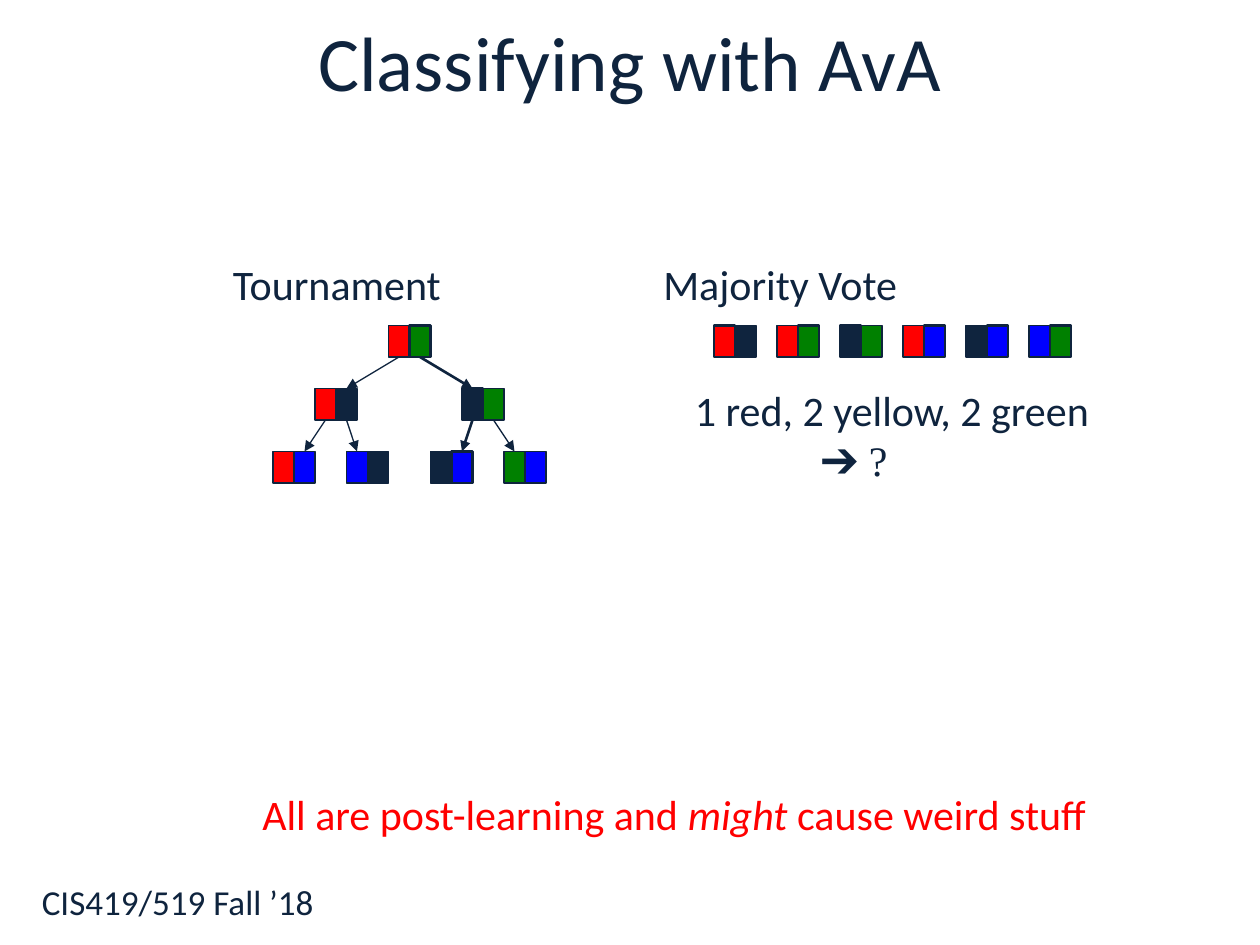
from lxml import etree
from pptx import Presentation
from pptx.dml.color import RGBColor
from pptx.enum.shapes import MSO_CONNECTOR, MSO_SHAPE
from pptx.enum.text import MSO_ANCHOR, MSO_AUTO_SIZE, PP_ALIGN
from pptx.oxml.ns import qn
from pptx.util import Emu, Pt

RECTANGLE = MSO_SHAPE.RECTANGLE
STRAIGHT = MSO_CONNECTOR.STRAIGHT
TOP, BOTTOM = 0, 2
LEFT_HALF, RIGHT_HALF = 0, 1
PX = 7620  # 120 px to the inch

THEME = {
    "ink": "0F243E", "red": "FF0000", "green": "008000", "blue": "0000FF",
    "font": "Calibri", "symbol_font": "Times New Roman",
    "title": 44, "body": 24, "footer": 20,
    "thin": 0.75, "thick": 1.5,
}

# Content: pairs are (left colour, right colour, halves with a thick outline)
TITLE = "Classifying with AvA"
TREE = [  # levels of (x, pair)
    [(370, ("red", "green", {RIGHT_HALF}))],
    [(300, ("red", "ink", set())), (440, ("ink", "green", {LEFT_HALF}))],
    [(260, ("red", "blue", set())), (330, ("blue", "ink", set())),
     (410, ("ink", "blue", {RIGHT_HALF})), (480, ("green", "blue", set()))],
]
VOTES = [
    ("red", "ink", {LEFT_HALF}), ("red", "green", {RIGHT_HALF}),
    ("ink", "green", {LEFT_HALF}), ("red", "blue", {RIGHT_HALF}),
    ("ink", "blue", {RIGHT_HALF}), ("blue", "green", {RIGHT_HALF}),
]
# Each text: box, paragraphs of runs (text, italic), colour, size
TEXTS = {
    "footer": ((28, 833, 1152, 67), [[("CIS419/519 Fall ’18", False)]], "ink", "footer"),
    "tournament": ((210, 240, 224, 61), [[("Tournament", False)]], "ink", "body"),
    "majority": ((620, 240, 252, 60), [[("Majority Vote", False)]], "ink", "body"),
    "count": ((650, 360, 403, 109),
              [[("1 red, 2 yellow, 2 green", False)], [("➔ ?", False)]], "ink", "body"),
    "warning": ((238, 745, 818, 60),
                [[("All are post-learning and ", False), ("might", True),
                  (" cause weird stuff", False)]], "red", "body"),
}

# Layout
HALF_WIDTH, HALF_HEIGHT = 20, 30
FIRST_ROW, LEVEL_STEP = 310, 60
VOTE_LEFT, VOTE_STEP = 680, 60
ANSWER_INDENT = 120


def px(*lengths):
    return [Emu(length * PX) for length in lengths]


def colour(name):
    return RGBColor.from_string(THEME[name])


def style_run(run, color, size, italic=False):
    run.font.name = THEME["font"]
    run.font.size = Pt(THEME[size])
    run.font.color.rgb = colour(color)
    run.font.italic = italic


def add_text(slide, box, paragraphs, color, size):
    text_frame = slide.shapes.add_textbox(*px(*box)).text_frame
    text_frame.word_wrap = False
    text_frame.auto_size = MSO_AUTO_SIZE.SHAPE_TO_FIT_TEXT
    for index, runs in enumerate(paragraphs):
        paragraph = text_frame.add_paragraph() if index else text_frame.paragraphs[0]
        for text, italic in runs:
            run = paragraph.add_run()
            run.text = text
            style_run(run, color, size, italic)
    return text_frame


def add_pair(slide, left, top, pair):
    *colors, thick = pair
    halves = []
    for index, color in enumerate(colors):
        half = slide.shapes.add_shape(
            RECTANGLE, *px(left + index * HALF_WIDTH, top, HALF_WIDTH, HALF_HEIGHT))
        half.shadow.inherit = False
        half.fill.solid()
        half.fill.fore_color.rgb = colour(color)
        half.line.color.rgb = colour("ink")
        half.line.width = Pt(THEME["thick" if index in thick else "thin"])
        halves.append(half)
    return halves


def add_arrow(slide, start, end):
    arrow = slide.shapes.add_connector(STRAIGHT, 0, 0, 0, 0)
    arrow.begin_connect(start, BOTTOM)
    arrow.end_connect(end, TOP)
    arrow.line.color.rgb = colour("ink")
    arrow.line.width = start.line.width
    etree.SubElement(arrow.line._get_or_add_ln(), qn("a:tailEnd"), type="triangle")
    etree.SubElement(arrow._element.spPr, qn("a:effectLst"))


def main():
    presentation = Presentation()
    presentation.slide_width, presentation.slide_height = px(1200, 900)
    slide = presentation.slides.add_slide(presentation.slide_layouts[5])

    # Title
    title = slide.shapes.title
    title.left, title.top, title.width, title.height = px(90, 4, 1020, 126)
    title.text_frame.text = TITLE
    title.text_frame.vertical_anchor = MSO_ANCHOR.MIDDLE
    paragraph = title.text_frame.paragraphs[0]
    paragraph.alignment = PP_ALIGN.CENTER
    paragraph.line_spacing = 0.75
    style_run(paragraph.runs[0], "ink", "title")

    # Tournament tree: each half leads to the facing half of the child below it
    levels = [[add_pair(slide, left, FIRST_ROW + depth * LEVEL_STEP, pair)
               for left, pair in level] for depth, level in enumerate(TREE)]
    for parents, children in zip(levels, levels[1:]):
        for index, child in enumerate(children):
            parent, side = divmod(index, 2)
            add_arrow(slide, parents[parent][side], child[1 - side])

    # Majority vote row
    for index, pair in enumerate(VOTES):
        add_pair(slide, VOTE_LEFT + index * VOTE_STEP, FIRST_ROW, pair)

    # Labels and footer
    frames = {name: add_text(slide, *text) for name, text in TEXTS.items()}
    answer = frames["count"].paragraphs[1]
    answer._p.get_or_add_pPr().set("marL", str(ANSWER_INDENT * PX))
    answer.runs[0].font.name = THEME["symbol_font"]

    presentation.save("out.pptx")


if __name__ == "__main__":
    main()
